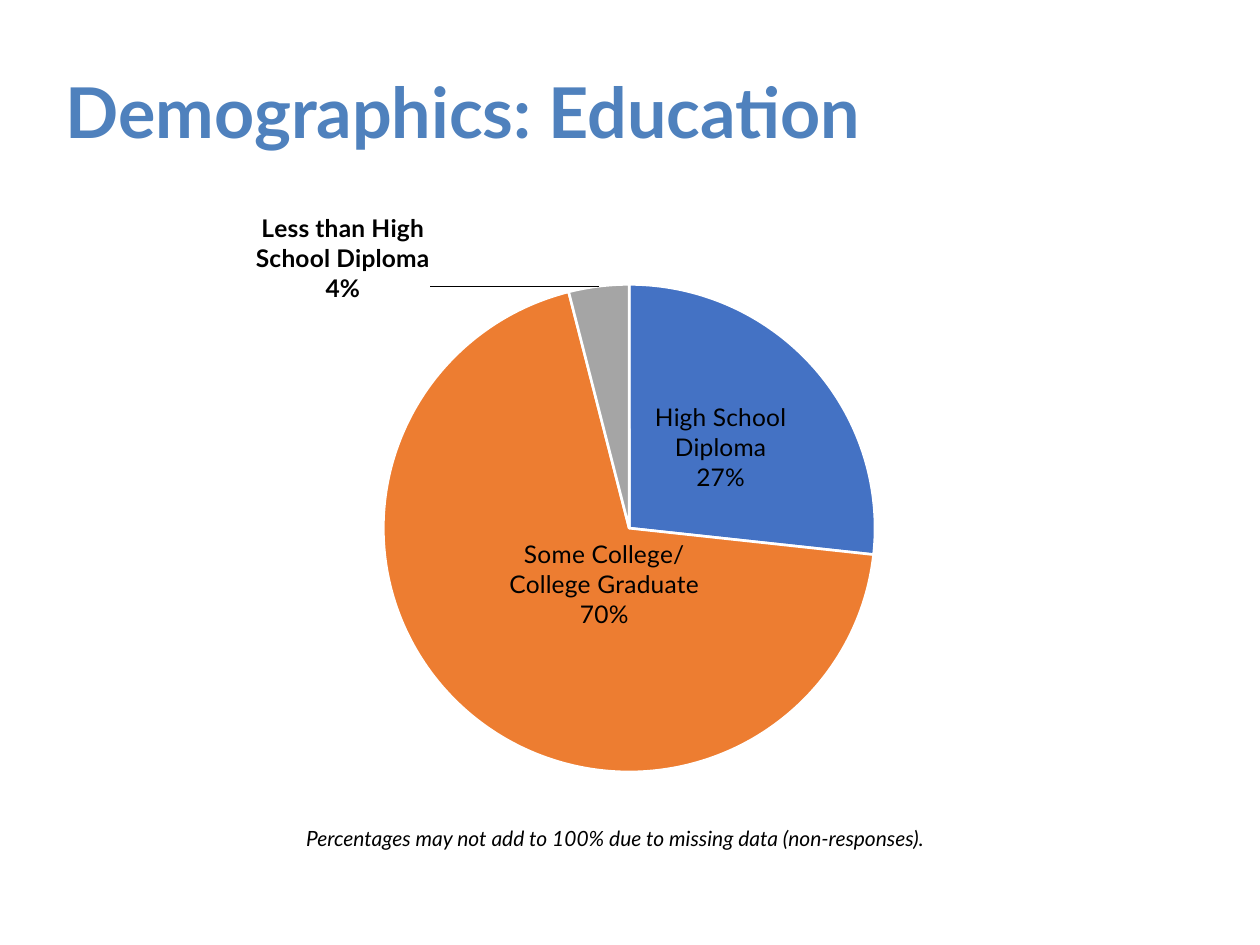
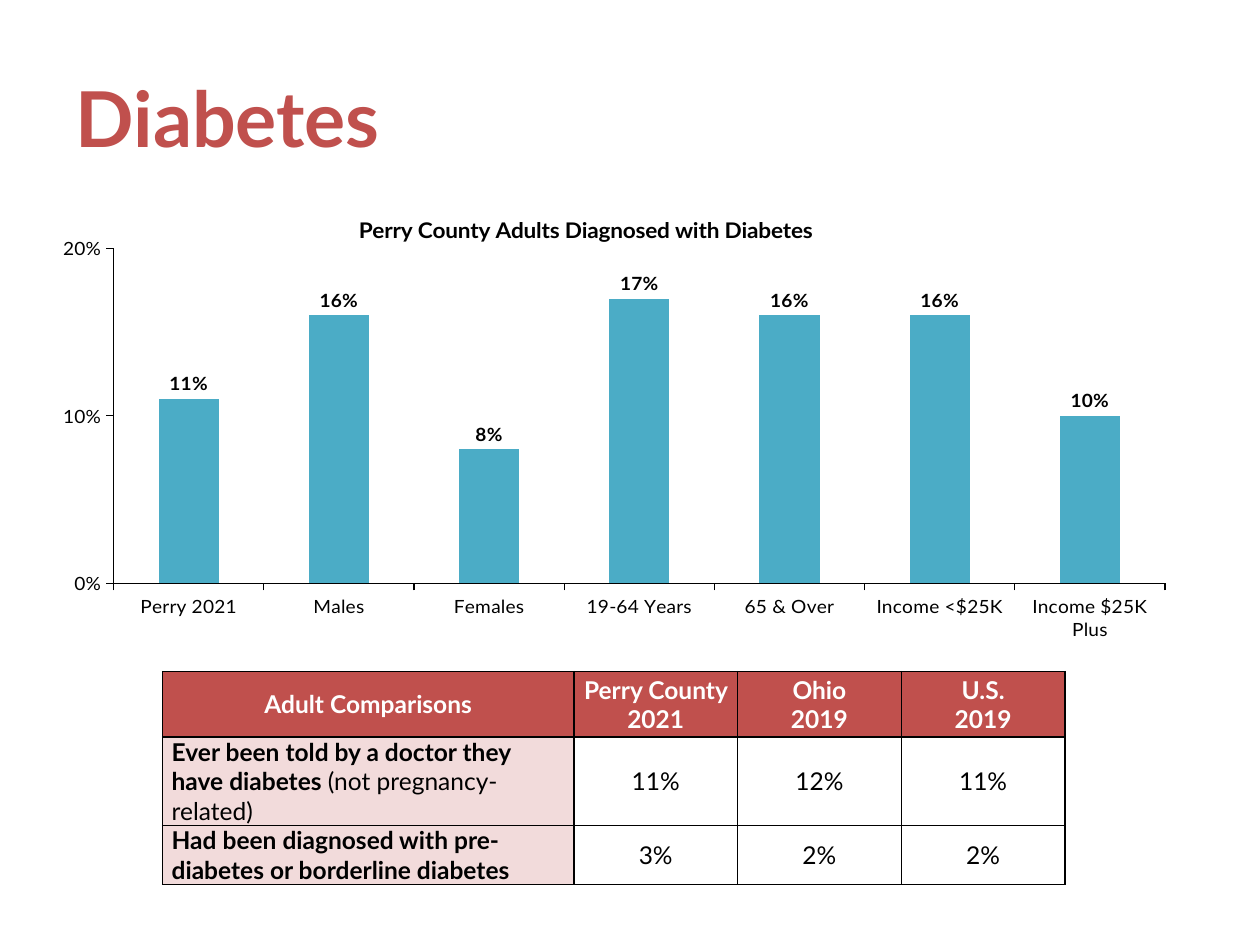
from lxml.etree import SubElement
from pptx import Presentation
from pptx.chart.data import CategoryChartData as Data
from pptx.dml.color import RGBColor
from pptx.enum.chart import XL_CHART_TYPE as Kind
from pptx.enum.chart import XL_LABEL_POSITION as Spot
from pptx.enum.chart import XL_TICK_LABEL_POSITION as Tick
from pptx.enum.chart import XL_TICK_MARK as Mark
from pptx.enum.text import MSO_ANCHOR as Anchor
from pptx.enum.text import PP_ALIGN as Align
from pptx.oxml.ns import qn
from pptx.util import Cm, Pt

HUES = {
    "black": "000000", "white": "FFFFFF", "title": "4F81BD",
    "red": "C0504D", "pink": "F2DBDB", "teal": "4BACC6",
    "blue": "4472C4", "orange": "ED7D31", "gray": "A5A5A5",
}


def hue(name):
    return RGBColor.from_string(HUES[name])


def place(part, pos, inner=False, edge=True, **sides):
    """Give a chart part a manual layout, as fractions of the chart."""
    for old in part.findall(qn("c:layout")):
        part.remove(old)
    box = part.makeelement(qn("c:layout"))
    part.insert(pos, box)
    spot = SubElement(box, qn("c:manualLayout"))
    tags = [("layoutTarget", "inner")] if inner else []
    if edge:
        tags += [("xMode", "edge"), ("yMode", "edge")]
    for tag, val in tags + list(sides.items()):
        SubElement(spot, qn("c:" + tag)).set("val", str(val))


class Deck:
    font = "Lato"

    def __init__(self):
        self.show = Presentation()
        self.show.slide_width, self.show.slide_height = Cm(25.4), Cm(19.05)
        self.slide = None

    def style(self, font, size, color="black", bold=False, italic=False):
        font.name, font.size = self.font, Pt(size)
        font.bold, font.italic = bold, italic
        font.color.rgb = hue(color)

    def page(self, text, color, size, box):
        self.slide = self.show.slides.add_slide(self.show.slide_layouts[5])
        head = self.slide.shapes.title
        head.left, head.top, head.width, head.height = map(Cm, box)
        frame = head.text_frame
        frame.text, frame.vertical_anchor = text, Anchor.MIDDLE
        para = frame.paragraphs[0]
        para.alignment = Align.LEFT
        self.style(para.font, size, color, bold=True)

    def note(self, text, box):
        frame = self.slide.shapes.add_textbox(*map(Cm, box)).text_frame
        frame.word_wrap, frame.text = True, text
        self.style(frame.paragraphs[0].font, 12, italic=True)

    def chart(self, kind, cats, vals, box, size, plot, fmt="General"):
        data = Data(number_format=fmt)
        data.categories = cats
        data.add_series("Series 1", vals)
        frame = self.slide.shapes.add_chart(kind, *map(Cm, box), data)
        chart = frame.chart
        chart.has_legend = chart.has_title = False
        self.style(chart.font, size)
        place(chart.element.xpath("//c:plotArea")[0], 0, inner=True, **plot)
        return chart

    def pie(self, parts, box, plot):
        """Each part: category, value, colour, label, bold, spot, shift."""
        chart = self.chart(Kind.PIE, [p[0] for p in parts],
                           [p[1] for p in parts], box, 14, plot)
        chart.plots[0].vary_by_categories = True
        row = chart.plots[0].series[0]
        row.data_labels.show_category_name = True
        row.data_labels.show_percentage = True
        for i, (_, _, color, text, bold, spot, _) in enumerate(parts):
            point = row.points[i]
            point.format.fill.solid()
            point.format.fill.fore_color.rgb = hue(color)
            point.format.line.color.rgb = hue("white")
            point.format.line.width = Pt(1.5)
            label = point.data_label
            label.text_frame.text = text
            for para in label.text_frame.paragraphs:
                for run in para.runs:
                    self.style(run.font, 14, bold=bold)
            label.position = spot
        for tag, part in zip(chart.element.xpath("//c:dLbl"), parts):
            if part[-1]:
                place(tag, 1, edge=False, x=part[-1][0], y=part[-1][1])

    def bars(self, title, cats, vals, box, plot):
        chart = self.chart(Kind.COLUMN_CLUSTERED, cats, vals, box, 11,
                           plot, "0%")
        # Title
        chart.has_title = True
        frame = chart.chart_title.text_frame
        frame.text = title
        self.style(frame.paragraphs[0].font, 13, bold=True)
        place(chart.element.xpath("//c:title")[0], 1, x=0.26, y=0.02)
        # Columns and their labels
        area = chart.plots[0]
        area.gap_width, area.vary_by_categories = 150, False
        fill = area.series[0].format.fill
        fill.solid()
        fill.fore_color.rgb = hue("teal")
        labels = area.series[0].data_labels
        labels.show_value, labels.position = True, Spot.OUTSIDE_END
        labels.number_format, labels.number_format_is_linked = "0%", False
        self.style(labels.font, 11, bold=True)
        # Axes
        for axis in (chart.category_axis, chart.value_axis):
            axis.has_major_gridlines = False
            axis.major_tick_mark = Mark.OUTSIDE
            axis.minor_tick_mark = Mark.NONE
            axis.format.line.color.rgb = hue("black")
            axis.format.line.width = Pt(0.75)
        chart.category_axis.tick_label_position = Tick.LOW
        scale = chart.value_axis
        scale.minimum_scale, scale.maximum_scale = 0, 0.2
        scale.major_unit = 0.1
        scale.tick_labels.number_format = "0%"
        scale.tick_labels.number_format_is_linked = False

    def cell(self, cell, runs, fill, color, center):
        """Runs are (text, bold) pairs; a newline starts a paragraph."""
        cell.margin_left = cell.margin_right = Cm(0.18)
        cell.margin_top = cell.margin_bottom = 0
        cell.vertical_anchor = Anchor.MIDDLE
        for side in "LRTB":
            line = SubElement(cell._tc.get_or_add_tcPr(), qn("a:ln" + side))
            line.set("w", str(Pt(1)))
            ink = SubElement(line, qn("a:solidFill"))
            SubElement(ink, qn("a:srgbClr")).set("val", HUES["black"])
        cell.fill.solid()
        cell.fill.fore_color.rgb = hue(fill)
        frame = cell.text_frame
        if len(runs) == 1:
            frame.text = runs[0][0]
        else:
            for text, bold in runs:
                run = frame.paragraphs[0].add_run()
                run.text, run.font.bold = text, bold
        for para in frame.paragraphs:
            para.alignment = Align.CENTER if center else Align.LEFT
            self.style(para.font, 14, color, bold=runs[0][1])

    def table(self, rows, box, cols, highs):
        grid = self.slide.shapes.add_table(len(rows), len(cols),
                                           *map(Cm, box)).table
        grid.first_row = grid.horz_banding = False
        for col, wide in zip(grid.columns, cols):
            col.width = Cm(wide)
        for row, high in zip(grid.rows, highs):
            row.height = Cm(high)
        for i, row in enumerate(rows):
            for j, item in enumerate(row):
                head, side = i == 0, j == 0
                runs = item if isinstance(item, list) else [
                    (item, head or side)]
                fill = "red" if head else "pink" if side else "white"
                self.cell(grid.cell(i, j), runs, fill,
                          "white" if head else "black", head or not side)


def main():
    deck = Deck()

    # Education
    deck.page("Demographics: Education", "title", 40,
              (1.07, 0.64, 26.04, 3.18))
    deck.pie([
        ("High School Diploma", 27, "blue",
         "High School\nDiploma\n27%", False, Spot.CENTER, None),
        ("Some College/ College Graduate", 70, "orange",
         "Some College/\nCollege Graduate\n70%", False, Spot.CENTER,
         (0.05, -0.06)),
        ("Less than High School Diploma", 4, "gray",
         "Less than High\nSchool Diploma\n4%", True, Spot.OUTSIDE_END,
         (-0.15, 0.04)),
    ], (1.42, 3.81, 22.53, 12.24), dict(x=0, y=0.15, w=1, h=0.81))
    deck.note("Percentages may not add to 100% due to missing data "
              "(non-responses).", (5.92, 16.51, 14.55, 0.64))

    # Diabetes
    deck.page("Diabetes", "red", 44, (1.27, 0.76, 22.86, 3.18))
    deck.table([
        ["Adult Comparisons", "Perry County 2021", "Ohio\n2019",
         "U.S.\n2019"],
        [[("Ever been told by a doctor they have diabetes ", True),
          ("(not pregnancy-related)", False)], "11%", "12%", "11%"],
        ["Had been diagnosed with pre-diabetes or borderline diabetes",
         "3%", "2%", "2%"],
    ], (3.28, 13.54, 18.19, 4.29), [8.29] + [3.3] * 3, [1.32, 1.78, 1.19])
    deck.bars("Perry County Adults Diagnosed with Diabetes",
              ["Perry 2021", "Males", "Females", "19-64 Years", "65 & Over",
               "Income <$25K", "Income $25K Plus"],
              [0.11, 0.16, 0.08, 0.17, 0.16, 0.16, 0.1],
              (1.27, 4.09, 22.23, 8.81),
              dict(x=0.04, y=0.11, w=0.96, h=0.81))

    deck.show.save("out.pptx")


if __name__ == "__main__":
    main()
